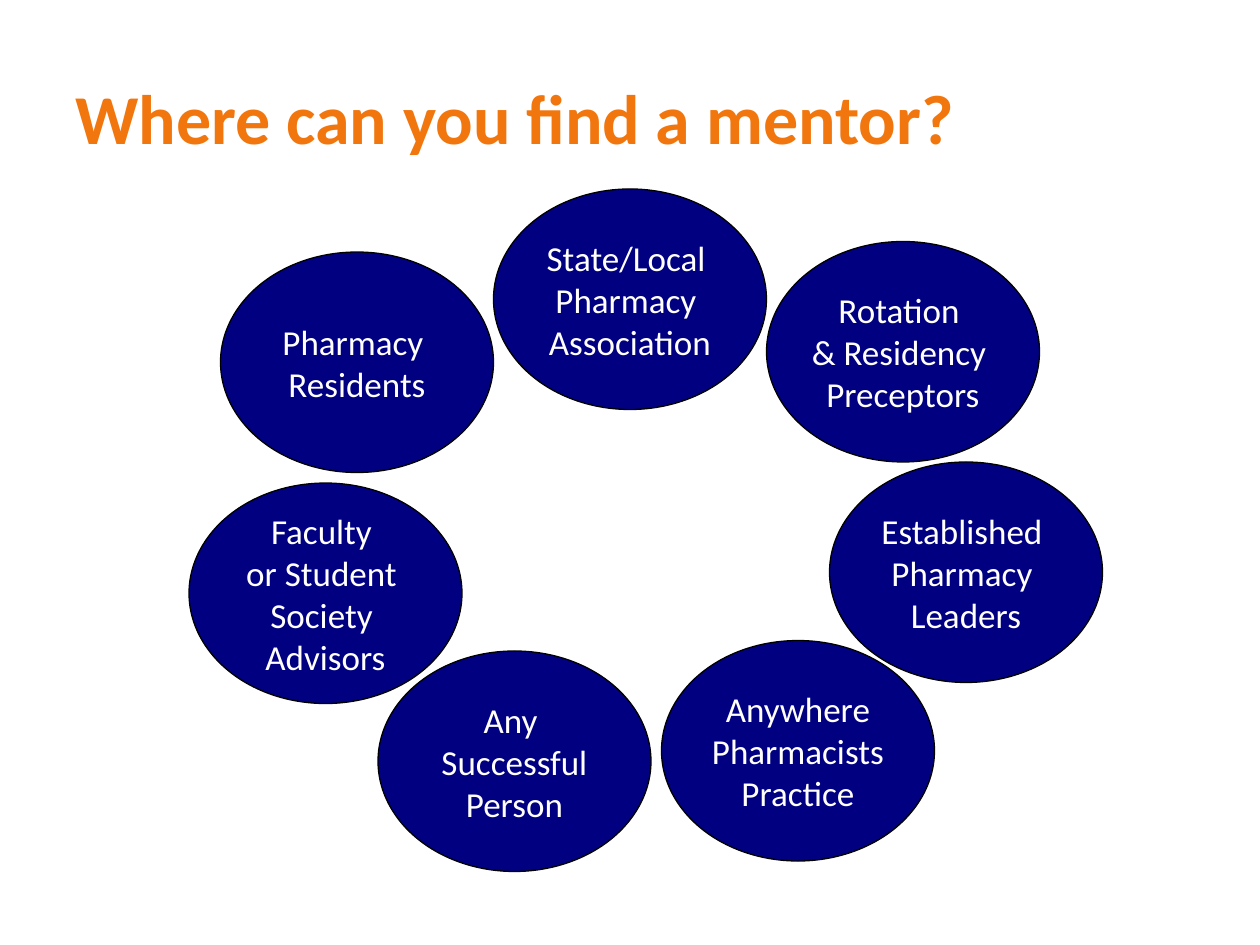
from pptx import Presentation
from pptx.dml.color import RGBColor as RGB
from pptx.enum.shapes import MSO_SHAPE as Shape
from pptx.enum.text import MSO_ANCHOR as Anchor, PP_ALIGN as Align
from pptx.util import Pt

PX = 9525
ORANGE, NAVY, WHITE, BLACK = "F2760E", "000080", "FFFFFF", "000000"
SIZE = 208, 168
MENTORS = [
    (376, 144, ["State/Local ", "Pharmacy ", "Association"]),
    (632, 352, ["Established \nPharmacy \nLeaders"]),
    (168, 192, ["Pharmacy ", "Residents"]),
    (584, 184, ["Rotation ", "& Residency ", "Preceptors"]),
    (144, 368, ["Faculty \nor Student \nSociety \nAdvisors"]),
    (288, 496, ["Any \nSuccessful\nPerson"]),
    (504, 488, ["Anywhere\nPharmacists\nPractice"]),
]


def color(code):
    return RGB.from_string(code)


class Deck:
    """Holds the text style and the current slide."""

    def __init__(self, wide, high):
        self.file = Presentation()
        self.file.slide_width, self.file.slide_height = wide * PX, high * PX
        self.slide = self.file.slides.add_slide(self.file.slide_layouts[6])
        self.font = "Calibri"

    def label(self, frame, lines, align, wrap, tint, **style):
        frame.word_wrap = wrap
        frame.vertical_anchor = Anchor.MIDDLE
        for i, line in enumerate(lines):
            para = frame.add_paragraph() if i else frame.paragraphs[0]
            para.text = line
            para.alignment = align
            for run in para.runs:
                for key, value in {"name": self.font, **style}.items():
                    setattr(run.font, key, value)
                run.font.color.rgb = color(tint)

    def title(self, text, *box):
        shape = self.slide.shapes.add_textbox(*(n * PX for n in box))
        self.label(shape.text_frame, [text], Align.LEFT, True, ORANGE,
                   size=Pt(40), bold=True)

    def oval(self, lines, *box):
        shape = self.slide.shapes.add_shape(Shape.OVAL, *(n * PX for n in box))
        shape.shadow.inherit = False
        shape.fill.solid()
        shape.fill.fore_color.rgb = color(NAVY)
        shape.line.color.rgb = color(BLACK)
        shape.line.width = Pt(0.75)
        self.label(shape.text_frame, lines, Align.CENTER, False, WHITE,
                   size=Pt(20))


def main():
    deck = Deck(960, 720)
    deck.title("Where can you find a mentor?", 48, 29, 864, 120)
    for left, top, lines in MENTORS:
        deck.oval(lines, left, top, *SIZE)
    deck.file.save("out.pptx")


if __name__ == "__main__":
    main()
